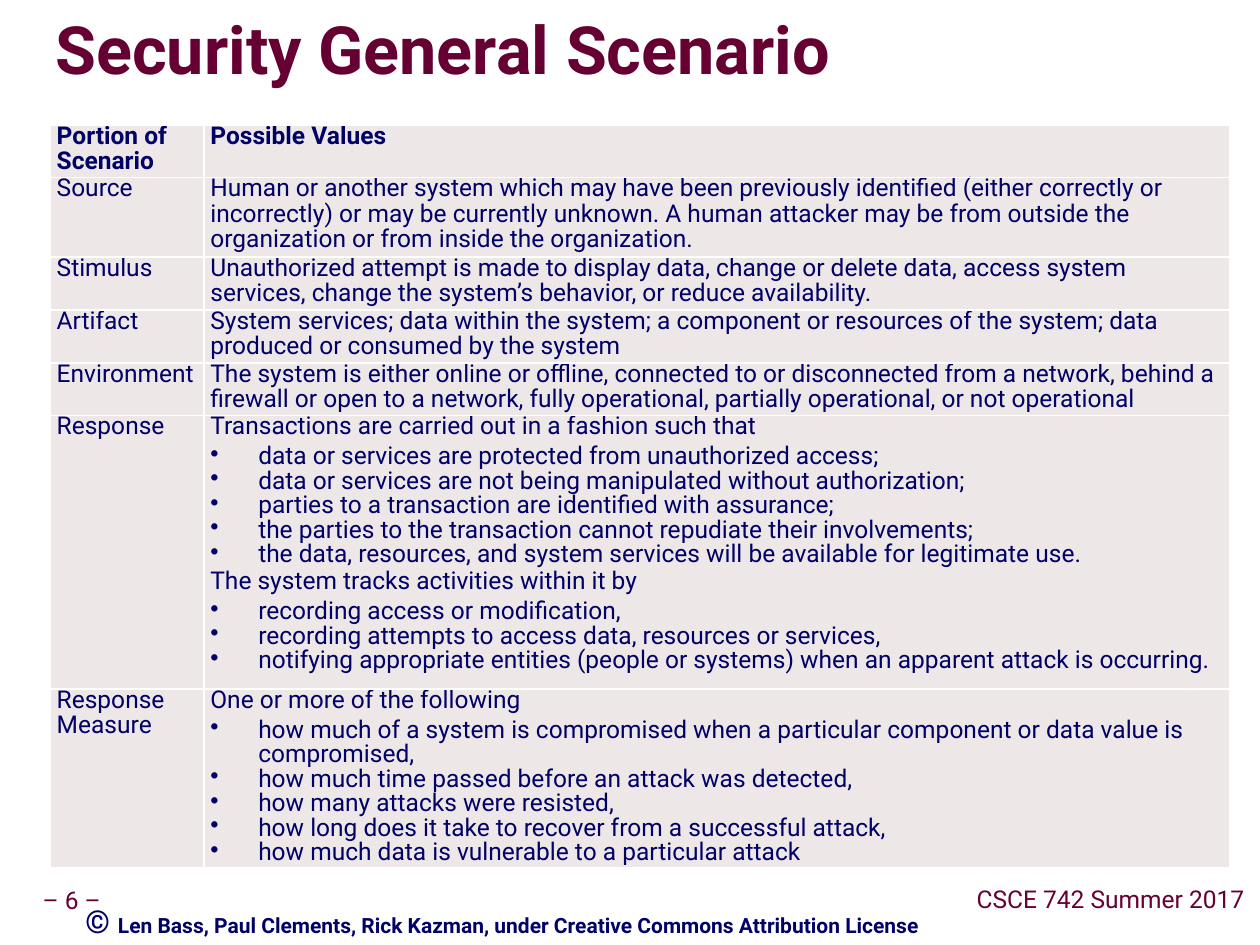
"""Build the Security General Scenario slide."""
from lxml import etree
from pptx import Presentation
from pptx.dml.color import RGBColor
from pptx.enum.text import MSO_ANCHOR, PP_ALIGN
from pptx.oxml import parse_xml
from pptx.oxml.ns import nsdecls, qn
from pptx.util import Inches, Pt

MIDDLE, TOP = MSO_ANCHOR.MIDDLE, MSO_ANCHOR.TOP
LEFT, CENTER = PP_ALIGN.LEFT, PP_ALIGN.CENTER
COLORS = {"maroon": "660033", "navy": "000066", "cell": "EDE7E7",
          "border": "FFFFFF", "shadow": "999999"}

SCENARIO = [
    ("Portion of\vScenario", 0.42, ["Possible Values"]),
    ("Source", 0.63, [
        "Human or another system which may have been previously identified (either correctly or "
        "incorrectly) or may be currently unknown. A human attacker may be from outside the "
        "organization or from inside the organization."]),
    ("Stimulus", 0.42, [
        "Unauthorized attempt is made to display data, change or delete data, access system "
        "services, change the system’s behavior, or reduce availability."]),
    ("Artifact", 0.42, [
        "System services; data within the system; a component or resources of the system; data "
        "produced or consumed by the system"]),
    ("Environment", 0.42, [
        "The system is either online or offline, connected to or disconnected from a network, "
        "behind a firewall or open to a network, fully operational, partially operational, "
        "or not operational"]),
    ("Response", 2.17, [
        "Transactions are carried out in a fashion such that",
        ["data or services are protected from unauthorized access;",
         "data or services are not being manipulated without authorization;",
         "parties to a transaction are identified with assurance;",
         "the parties to the transaction cannot repudiate their involvements;",
         "the data, resources, and system services will be available for legitimate use."],
        "The system tracks activities within it by",
        ["recording access or modification,",
         "recording attempts to access data, resources or services,",
         "notifying appropriate entities (people or systems) when an apparent attack is "
         "occurring."]]),
    ("Response\vMeasure", 1.42, [
        "One or more of the following",
        ["how much of a system is compromised when a particular component or data value is "
         "compromised,",
         "how much time passed before an attack was detected,",
         "how many attacks were resisted,",
         "how long does it take to recover from a successful attack,",
         "how much data is vulnerable to a particular attack"]]),
]


class ScenarioSlide:
    """Hold the style and the current slide."""

    def __init__(self, slide, font="Roboto"):
        self.slide = slide
        self.font = font

    def style(self, font, size, color, bold=False):
        font.name, font.size, font.bold = self.font, Pt(size), bold
        font.color.rgb = RGBColor.from_string(COLORS[color])

    def text(self, words, box, size, color, bold=False, align=LEFT, anchor=MIDDLE,
             inset=0.05, wrap=True, spacing=None):
        frame = self.slide.shapes.add_textbox(*map(Inches, box)).text_frame
        frame.word_wrap, frame.vertical_anchor = wrap, anchor
        frame.margin_left = frame.margin_right = Inches(inset)
        frame.margin_top = frame.margin_bottom = Inches(min(inset, 0.05))
        paragraph = frame.paragraphs[0]
        paragraph.text = words
        paragraph.alignment, paragraph.line_spacing = align, spacing
        self.style(paragraph.font, size, color, bold)
        return paragraph

    def title(self, words, box):
        paragraph = self.text(words, box, 38, "maroon", True, inset=0, spacing=0.87)
        paragraph.runs[0].font._element.append(parse_xml(
            f'<a:effectLst {nsdecls("a")}><a:outerShdw dist="50800" dir="2700000">'
            f'<a:srgbClr val="{COLORS["shadow"]}"/></a:outerShdw></a:effectLst>'))

    def footer(self, words, box):
        self.text(words, box, 14, "maroon", align=CENTER, wrap=False, spacing=0.9)

    def credit(self, mark, words, box):
        paragraph = self.text(mark, box, 12, "navy", True, anchor=TOP, inset=0.1)
        paragraph.runs[0].font.size = Pt(18)
        paragraph.add_run().text = words

    def borders(self, cell):
        properties = cell._tc.get_or_add_tcPr()
        for side in ("lnL", "lnR", "lnT", "lnB"):
            properties.append(parse_xml(
                f'<a:{side} {nsdecls("a")} w="12700"><a:solidFill>'
                f'<a:srgbClr val="{COLORS["border"]}"/></a:solidFill></a:{side}>'))

    def cell_line(self, paragraph, words, bold, bullet, first, label):
        paragraph.text = words
        properties = paragraph._p.get_or_add_pPr()
        if bullet:
            properties.set("marL", str(Inches(0.38)))
            properties.set("indent", str(Inches(-0.38)))
            etree.SubElement(properties, qn("a:buChar")).set("char", "•")
            paragraph.line_spacing = Pt(14)
        else:
            paragraph.line_spacing = Pt(14.5)
            paragraph.space_after = Pt(4 if label else 3)
            if not first:
                paragraph.space_before = Pt(1)
        self.style(paragraph.font, 14, "navy", bold)

    def cell(self, cell, content, bold, label=False):
        self.borders(cell)
        cell.fill.solid()
        cell.fill.fore_color.rgb = RGBColor.from_string(COLORS["cell"])
        cell.margin_left = cell.margin_right = Inches(0.05)
        cell.margin_top = cell.margin_bottom = 0
        lines = []
        for part in content:
            bullet = isinstance(part, list)
            lines += [(words, bullet) for words in (part if bullet else [part])]
        frame = cell.text_frame
        for index, (words, bullet) in enumerate(lines):
            paragraph = frame.add_paragraph() if index else frame.paragraphs[0]
            self.cell_line(paragraph, words, bold, bullet, index == 0, label)

    def table(self, rows, box, widths):
        table = self.slide.shapes.add_table(len(rows), len(widths), *map(Inches, box)).table
        table.first_row = table.horz_banding = False
        for column, width in zip(table.columns, widths):
            column.width = Inches(width)
        for index, (portion, height, values) in enumerate(rows):
            table.rows[index].height = Inches(height)
            self.cell(table.cell(index, 0), [portion], index == 0, label=True)
            self.cell(table.cell(index, 1), values, index == 0)


def main():
    deck = Presentation()
    deck.slide_width, deck.slide_height = Inches(10), Inches(7.5)
    page = ScenarioSlide(deck.slides.add_slide(deck.slide_layouts[6]))
    page.footer("– 6 –", (0.24, 7, 0.66, 0.31))
    page.footer("CSCE 742 Summer 2017", (7.66, 6.99, 2.31, 0.31))
    page.title("Security General Scenario", (0.44, 0, 9.53, 0.85))
    page.table(SCENARIO, (0.4, 0.99, 9.35, 5.88), (1.22, 8.14))
    page.credit("© ", "Len Bass, Paul Clements, Rick Kazman, under Creative Commons "
                "Attribution License", (0.58, 7.11, 7.33, 0.31))
    deck.save("out.pptx")


if __name__ == "__main__":
    main()
